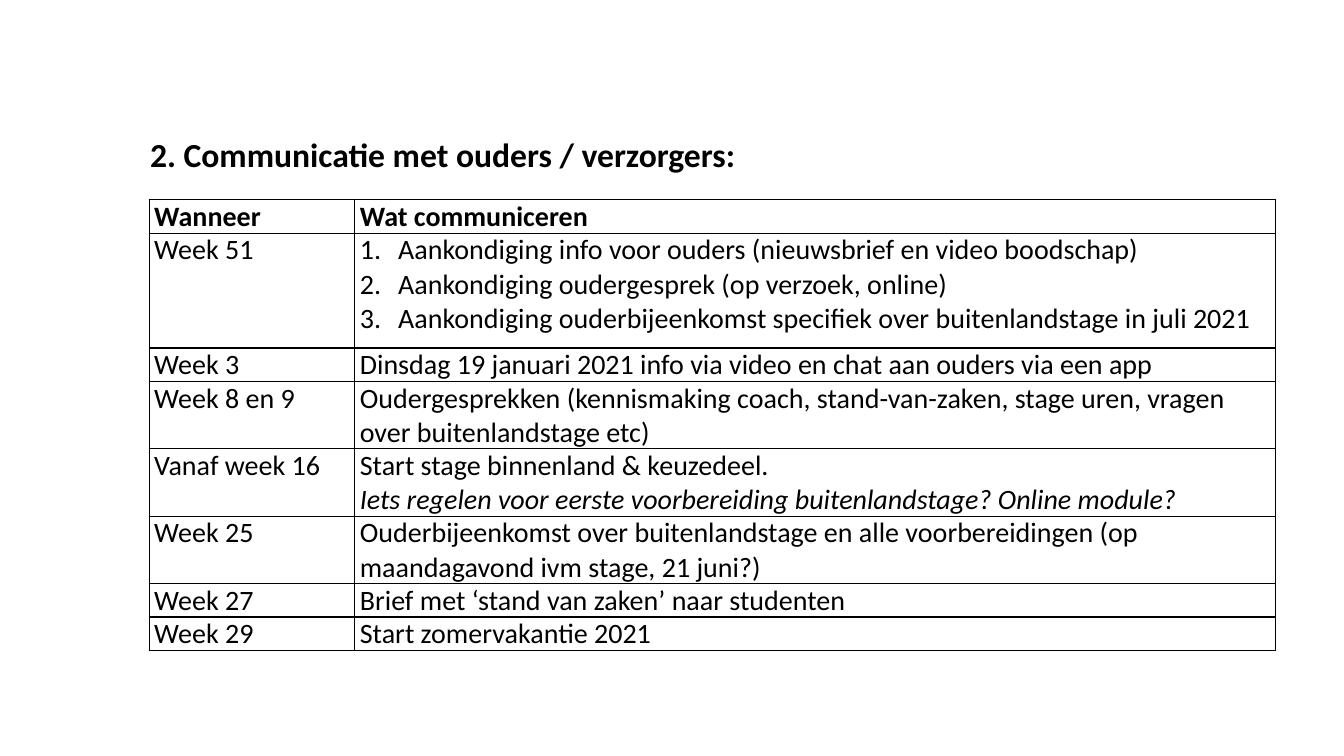
"""Build the slide that plans communication with parents and carers."""
from dataclasses import dataclass

from lxml import etree
from pptx import Presentation
from pptx.dml.color import RGBColor
from pptx.enum.text import MSO_ANCHOR
from pptx.oxml.ns import qn
from pptx.util import Inches, Pt

TOP = MSO_ANCHOR.TOP
WIDE, HIGH = 13.33, 7.5
LINE = 0.33


@dataclass(frozen=True)
class Theme:
    font: str = "Calibri"
    ink: RGBColor = RGBColor(0, 0, 0)
    head: int = 24
    body: int = 20
    rule: int = 1


@dataclass(frozen=True)
class Row:
    when: str
    what: tuple[str, ...]
    lines: float = 1
    bold: bool = False
    listed: bool = False
    slanted: int = -1


THEME = Theme()
ROWS = (
    Row("Wanneer", ("Wat communiceren",), bold=True),
    Row("Week 51", (
        "Aankondiging info voor ouders (nieuwsbrief en video boodschap)",
        "Aankondiging oudergesprek (op verzoek, online)",
        "Aankondiging ouderbijeenkomst specifiek over buitenlandstage in juli 2021",
    ), lines=3.45, listed=True),
    Row("Week 3", ("Dinsdag 19 januari 2021 info via video en chat aan ouders via een app",)),
    Row("Week 8 en 9", (
        "Oudergesprekken (kennismaking coach, stand-van-zaken, stage uren, "
        "vragen over buitenlandstage etc)",), lines=2),
    Row("Vanaf week 16", (
        "Start stage binnenland & keuzedeel.",
        "Iets regelen voor eerste voorbereiding buitenlandstage? Online module?",
    ), lines=2, slanted=1),
    Row("Week 25", (
        "Ouderbijeenkomst over buitenlandstage en alle voorbereidingen "
        "(op maandagavond ivm stage, 21 juni?)",), lines=2),
    Row("Week 27", ("Brief met ‘stand van zaken’ naar studenten",)),
    Row("Week 29", ("Start zomervakantie 2021",)),
)


def across(share: float) -> int:
    return Inches(WIDE * share / 100)


def down(share: float) -> int:
    return Inches(HIGH * share / 100)


def style(para, size: int, bold: bool = False, slant: bool = False) -> None:
    font = para.font
    font.name, font.size = THEME.font, Pt(size)
    font.bold, font.italic = bold, slant
    font.color.rgb = THEME.ink


def number(para) -> None:
    props = para._p.get_or_add_pPr()
    props.set("marL", str(Inches(0.38)))
    props.set("indent", str(-Inches(0.38)))
    etree.SubElement(props, qn("a:buFont"), typeface="+mj-lt")
    etree.SubElement(props, qn("a:buAutoNum"), type="arabicPeriod")


def frame(cell) -> None:
    props = cell._tc.get_or_add_tcPr()
    for side in "LRTB":
        edge = etree.SubElement(props, qn(f"a:ln{side}"), w=str(Pt(THEME.rule)))
        fill = etree.SubElement(edge, qn("a:solidFill"))
        etree.SubElement(fill, qn("a:srgbClr"), val=str(THEME.ink))
    cell.fill.background()


def write(cell, texts: tuple[str, ...], row: Row, listed: bool = False) -> None:
    cell.margin_left = cell.margin_right = Inches(0.05)
    cell.margin_top = cell.margin_bottom = 0
    cell.vertical_anchor = TOP
    frame(cell)
    body = cell.text_frame
    body.text = "\n".join(texts)
    for spot, para in enumerate(body.paragraphs):
        if listed:
            number(para)
        style(para, THEME.body, row.bold, spot == row.slanted)


def title(slide, text: str) -> None:
    box = slide.shapes.add_textbox(across(10.43), down(17.07), across(52), down(6.67))
    body = box.text_frame
    body.word_wrap = True
    body.text = text
    style(body.paragraphs[0], THEME.head, bold=True)


def plan(slide) -> None:
    high = Inches(LINE * sum(row.lines for row in ROWS))
    shape = slide.shapes.add_table(
        len(ROWS), 2, across(11.1), down(26.4), across(83.8), high)
    table = shape.table
    for col, share in zip(table.columns, (15.3, 68.5)):
        col.width = across(share)
    for spot, row in enumerate(ROWS):
        table.rows[spot].height = Inches(LINE * row.lines)
        write(table.cell(spot, 0), (row.when,), row)
        write(table.cell(spot, 1), row.what, row, row.listed)


def main() -> None:
    deck = Presentation()
    deck.slide_width, deck.slide_height = Inches(WIDE), Inches(HIGH)
    slide = deck.slides.add_slide(deck.slide_layouts[6])
    title(slide, "2. Communicatie met ouders / verzorgers:")
    plan(slide)
    deck.save("out.pptx")


if __name__ == "__main__":
    main()
